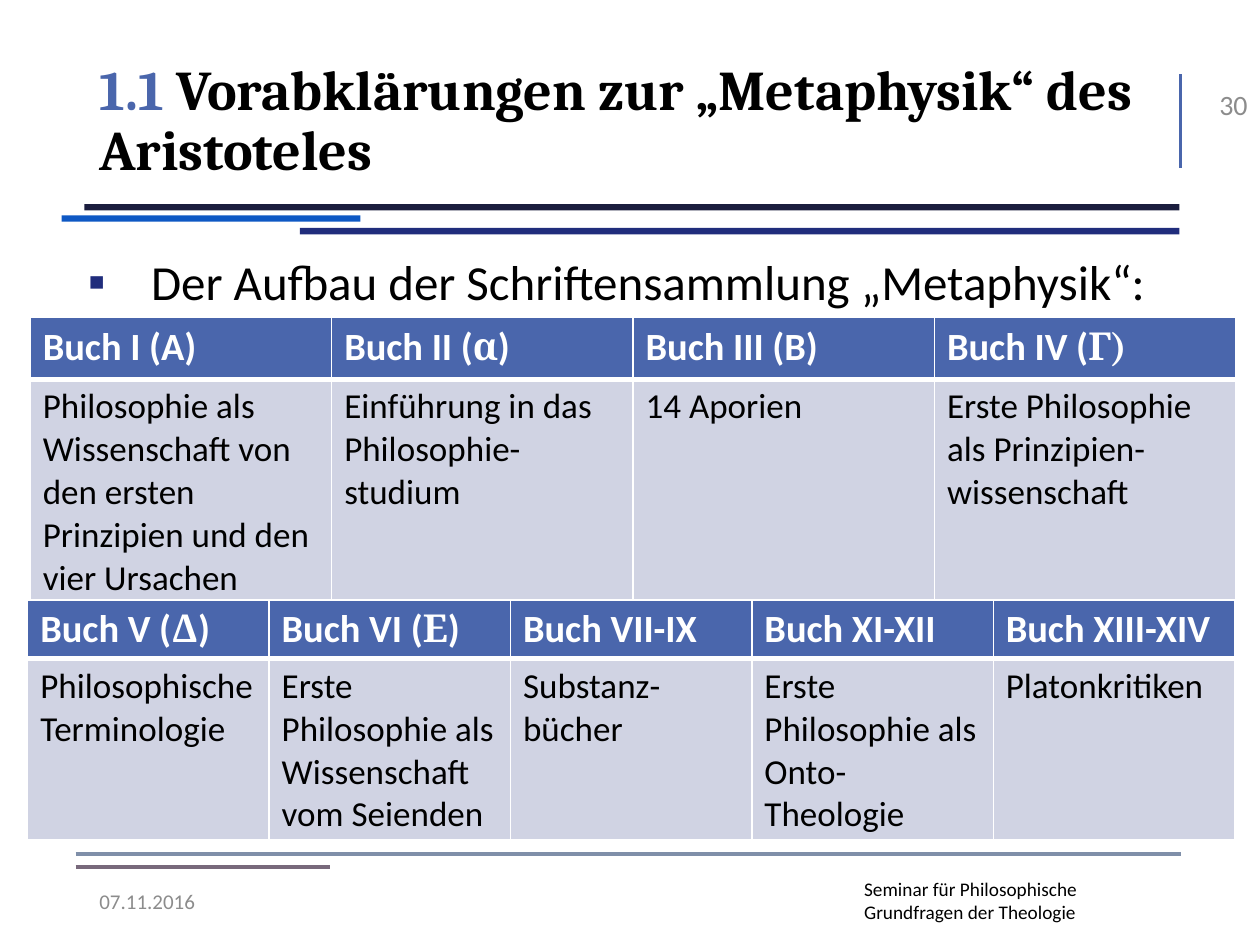
import pptx
import pptx.dml.color
import pptx.enum.shapes
import pptx.enum.text
import pptx.oxml
import pptx.oxml.ns
import pptx.util
from lxml import etree

RGB = pptx.dml.color.RGBColor
Pt = pptx.util.Pt
ALIGN = pptx.enum.text.PP_ALIGN
ANCHOR = pptx.enum.text.MSO_ANCHOR

BLACK = RGB(0x00, 0x00, 0x00)
WHITE = RGB(0xFF, 0xFF, 0xFF)
GREY = RGB(0x8C, 0x8C, 0x8C)
BLUE = RGB(0x4A, 0x66, 0xAC)
NAVY = RGB(0x20, 0x2D, 0x7C)
DARK_NAVY = RGB(0x1B, 0x1E, 0x3E)
BRIGHT_BLUE = RGB(0x0E, 0x58, 0xC4)
SLATE = RGB(0x7F, 0x8F, 0xA9)
MAUVE = RGB(0x78, 0x69, 0x7B)
PALE_BLUE = RGB(0xD0, 0xD3, 0xE3)

deck = pptx.Presentation()
deck.slide_width = pptx.util.Inches(10)
deck.slide_height = pptx.util.Inches(7.5)
slide = deck.slides.add_slide(deck.slide_layouts[1])
shapes = slide.shapes


def share(*percents):
    """Turn x, y, x, y percentages of the slide into lengths."""
    sides = (deck.slide_width, deck.slide_height) * 2
    return [pptx.util.Emu(round(side * p / 100)) for side, p in zip(sides, percents)]


def style(paragraph, size, color, bold=False, font="Calibri"):
    paragraph.font.name = font
    paragraph.font.size = Pt(size)
    paragraph.font.bold = bold
    paragraph.font.color.rgb = color


# Bars under the title
for left, top, width, color in [
    (6.7, 21.6, 86.9, DARK_NAVY),
    (4.9, 22.8, 23.7, BRIGHT_BLUE),
    (23.8, 24.13, 69.8, NAVY),
]:
    bar = shapes.add_shape(pptx.enum.shapes.MSO_SHAPE.RECTANGLE, *share(left, top, width, 0.67))
    bar.shadow.inherit = False
    bar.fill.solid()
    bar.fill.fore_color.rgb = color
    bar.line.fill.background()

# Rules beside the page number and above the footer
for ends, color, weight in [
    ((93.7, 7.87, 93.7, 17.73), BLUE, 2),
    ((6, 90.4, 93.7, 90.4), SLATE, 2.5),
    ((6, 91.73, 26.2, 91.73), MAUVE, 2.25),
]:
    rule = shapes.add_connector(pptx.enum.shapes.MSO_CONNECTOR.STRAIGHT, *share(*ends))
    rule.line.color.rgb = color
    rule.line.width = Pt(weight)
    etree.SubElement(rule._element.spPr, pptx.oxml.ns.qn("a:effectLst"))

# Title
title = shapes.title
title.left, title.top, title.width, title.height = share(6.9, 5.33, 86.2, 15.2)
title.line.color.rgb = WHITE
title.line.width = Pt(6)
title.text_frame.auto_size = pptx.enum.text.MSO_AUTO_SIZE.NONE
title.text_frame.vertical_anchor = ANCHOR.MIDDLE
heading = title.text_frame.paragraphs[0]
heading.alignment = ALIGN.LEFT
heading.line_spacing = 0.9
style(heading, 32, BLACK, bold=True, font="Cambria")
number = heading.add_run()
number.text = "1.1"
number.font.color.rgb = BLUE
heading.add_run().text = " Vorabklärungen zur „Metaphysik“ des Aristoteles"

# Bullet line
body = slide.placeholders[1]
body.left, body.top, body.width, body.height = share(6, 26.67, 87.6, 7.47)
body.text_frame.auto_size = pptx.enum.text.MSO_AUTO_SIZE.NONE
topic = body.text_frame.paragraphs[0]
topic.text = "Der Aufbau der Schriftensammlung „Metaphysik“:"
topic.line_spacing = 0.9
topic.space_before = Pt(0)
bullet = topic._p.get_or_add_pPr()
bullet.set("marL", str(pptx.util.Inches(0.5)))
bullet.set("indent", str(-pptx.util.Inches(0.5)))
for xml in (
    f'<a:buClr {pptx.oxml.ns.nsdecls("a")}><a:srgbClr val="{NAVY}"/></a:buClr>',
    f'<a:buFont {pptx.oxml.ns.nsdecls("a")} typeface="Calibri"/>',
    f'<a:buChar {pptx.oxml.ns.nsdecls("a")} char="▪"/>',
):
    bullet.append(pptx.oxml.parse_xml(xml))
style(topic, 28, BLACK)

# Date, page number and seminar
for text, place, size, color, align, anchor in [
    ("Seminar für Philosophische Grundfragen der Theologie",
     (67.6, 92.13, 19.5, 6.27), 11, BLACK, ALIGN.LEFT, ANCHOR.TOP),
    ("07.11.2016", (6.9, 92.67, 9.9, 5.33), 12, GREY, ALIGN.LEFT, ANCHOR.MIDDLE),
    ("30", (93.7, 7.33, 6.3, 7.47), 16, GREY, ALIGN.RIGHT, ANCHOR.MIDDLE),
]:
    note = shapes.add_textbox(*share(*place)).text_frame
    note.word_wrap = True
    note.vertical_anchor = anchor
    note.paragraphs[0].text = text
    note.paragraphs[0].alignment = align
    style(note.paragraphs[0], size, color)

# Tables of the books: each heading is split so that every second part is Greek
books_1_to_4 = [
    (["Buch I (A)"],
     "Philosophie als Wissenschaft von den ersten Prinzipien und den vier Ursachen"),
    (["Buch II (", "α", ")"], "Einführung in das Philosophie-studium"),
    (["Buch III (Β)"], "14 Aporien"),
    (["Buch IV (", "Γ)"], "Erste Philosophie als Prinzipien-wissenschaft"),
]
books_5_to_14 = [
    (["Buch V (", "Δ", ")"], "Philosophische Terminologie"),
    (["Buch VI (", "Ε", ")"], "Erste Philosophie als Wissenschaft vom Seienden"),
    (["Buch VII-IX"], "Substanz-bücher"),
    (["Buch XI-XII"], "Erste Philosophie als Onto-Theologie"),
    (["Buch XIII-XIV"], "Platonkritiken"),
]
for books, place, head_share in [
    (books_1_to_4, (2.4, 33.6, 95.7, 30.13), 6.53),
    (books_5_to_14, (2.2, 63.47, 95.8, 25.33), 6.13),
]:
    table = shapes.add_table(2, len(books), *share(*place)).table
    _, table.rows[0].height, _, table.rows[1].height = share(
        0, head_share, 0, place[3] - head_share)
    for column, (book, content) in enumerate(books):
        for row, (parts, size, color, fill, top, bottom) in enumerate([
            (book, 22, WHITE, BLUE, 1, 3),
            ([content], 20, BLACK, PALE_BLUE, 3, 1),
        ]):
            cell = table.cell(row, column)
            entry = cell.text_frame.paragraphs[0]
            style(entry, size, color, bold=row == 0)
            for index, part in enumerate(parts):
                run = entry.add_run()
                run.text = part
                if index % 2:
                    run.font.name = "Cambria"
            for side, weight in zip("LRTB", (1, 1, top, bottom)):
                cell._tc.get_or_add_tcPr().append(pptx.oxml.parse_xml(
                    f'<a:ln{side} {pptx.oxml.ns.nsdecls("a")} w="{Pt(weight)}"><a:solidFill>'
                    f'<a:srgbClr val="{WHITE}"/></a:solidFill></a:ln{side}>'))
            cell.fill.solid()
            cell.fill.fore_color.rgb = fill

deck.save("out.pptx")
